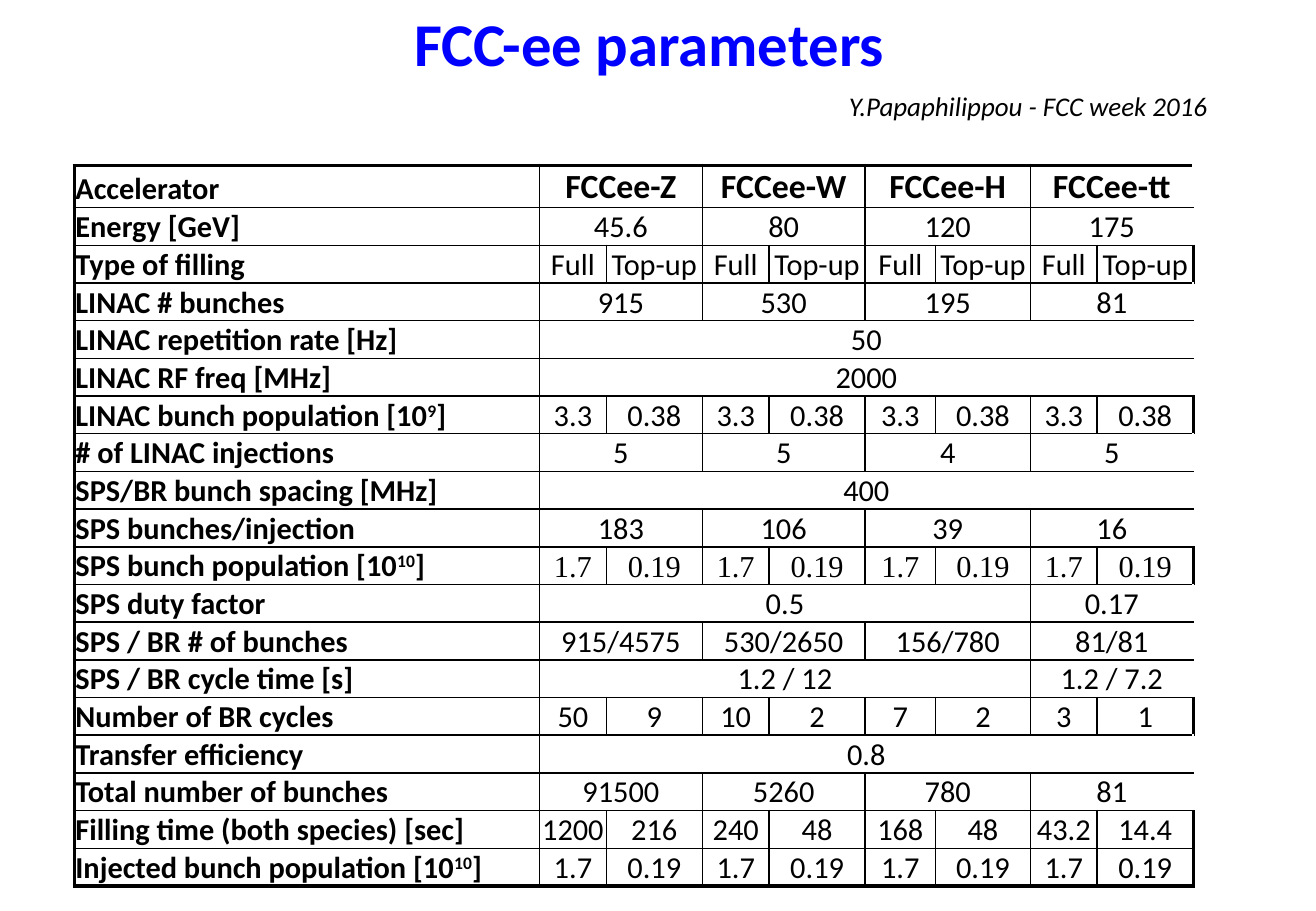
from pptx import Presentation
from pptx.dml.color import RGBColor
from pptx.enum.text import MSO_ANCHOR, PP_ALIGN
from pptx.oxml import parse_xml
from pptx.oxml.ns import nsdecls
from pptx.util import Pt

BLACK = RGBColor(0x00, 0x00, 0x00)
BLUE = RGBColor(0x00, 0x00, 0xFF)
THIN, THICK = 1, 2.25

# Row label (exponents between bars), then its values
ROWS = [
    ("Accelerator", ["FCCee-Z", "FCCee-W", "FCCee-H", "FCCee-tt"]),
    ("Energy [GeV]", ["45.6", "80", "120", "175"]),
    ("Type of filling", ["Full", "Top-up"] * 4),
    ("LINAC # bunches", ["915", "530", "195", "81"]),
    ("LINAC repetition rate [Hz]", ["50"]),
    ("LINAC RF freq [MHz]", ["2000"]),
    ("LINAC bunch population [10|9|]", ["3.3", "0.38"] * 4),
    ("# of LINAC injections", ["5", "5", "4", "5"]),
    ("SPS/BR bunch spacing [MHz]", ["400"]),
    ("SPS bunches/injection", ["183", "106", "39", "16"]),
    ("SPS bunch population [10|10|]", ["1.7", "0.19"] * 4),
    ("SPS duty factor", ["0.5", "0.17"]),
    ("SPS / BR # of bunches", ["915/4575", "530/2650", "156/780", "81/81"]),
    ("SPS / BR cycle time [s]", ["1.2 / 12", "1.2 / 7.2"]),
    ("Number of BR cycles", ["50", "9", "10", "2", "7", "2", "3", "1"]),
    ("Transfer efficiency", ["0.8"]),
    ("Total number of bunches", ["91500", "5260", "780", "81"]),
    ("Filling time (both species) [sec]",
     ["1200", "216", "240", "48", "168", "48", "43.2", "14.4"]),
    ("Injected bunch population [10|10|]", ["1.7", "0.19"] * 4),
]
# Columns taken by each value, by number of values in the row
SPANS = {1: [8], 2: [6, 2], 4: [2] * 4, 8: [1] * 8}
WIDTHS = [275.8, 39.6, 56.9, 39.6, 56.9, 41.8, 56.2, 39.6, 56.9]
HEADER_HEIGHT, ROW_HEIGHT = 25.1, 22.1


def write(frame, text, size=18, font="Calibri", color=BLACK, bold=False,
          italic=False, align=PP_ALIGN.LEFT):
    para = frame.paragraphs[0]
    para.alignment = align
    for index, part in enumerate(text.split("|")):
        span = para.add_run()
        span.text = part
        span.font.size = Pt(size)
        span.font.name = font
        span.font.color.rgb = color
        span.font.bold = bold
        span.font.italic = italic
        if index % 2:
            span.font._element.set("baseline", "30000")


def add_borders(cell, weights):
    properties = cell._tc.get_or_add_tcPr()
    for side in "LRTB":
        if side in weights:
            properties.append(parse_xml(
                f'<a:ln{side} {nsdecls("a")} w="{Pt(weights[side])}"><a:solidFill>'
                f'<a:srgbClr val="{BLACK}"/></a:solidFill></a:ln{side}>'))


deck = Presentation()
deck.slide_width, deck.slide_height = Pt(780), Pt(540)
page = deck.slides.add_slide(deck.slide_layouts[6])

# Title
box = page.shapes.add_textbox(Pt(193.7), Pt(0), Pt(382.3), Pt(41))
box.text_frame.word_wrap = True
write(box.text_frame, "FCC-ee parameters", size=36, color=BLUE, bold=True,
      align=PP_ALIGN.CENTER)

# Source line
box = page.shapes.add_textbox(Pt(496.1), Pt(48.2), Pt(283.7), Pt(28.8))
box.text_frame.word_wrap = True
box.text_frame.vertical_anchor = MSO_ANCHOR.MIDDLE
write(box.text_frame, "Y.Papaphilippou - FCC week 2016", size=16, italic=True)

# Parameter table
height = HEADER_HEIGHT + ROW_HEIGHT * (len(ROWS) - 1)
table = page.shapes.add_table(len(ROWS), len(WIDTHS), Pt(44), Pt(98),
                              Pt(sum(WIDTHS)), Pt(height)).table
table.first_row = table.horz_banding = False
for column, width in zip(table.columns, WIDTHS):
    column.width = Pt(width)

last_row, last_column = len(ROWS) - 1, len(WIDTHS) - 1
for row, (label, values) in enumerate(ROWS):
    table.rows[row].height = Pt(ROW_HEIGHT if row else HEADER_HEIGHT)
    start = 0
    for text, width in zip([label] + values, [1] + SPANS[len(values)]):
        end = start + width - 1
        # Outer frame is thick, and so is the right side of H injections
        right = THICK if end == last_column or (
            label == "# of LINAC injections" and end == 6) else THIN
        for column in range(start, end + 1):
            cell = table.cell(row, column)
            weights = {"T": THIN if row else THICK,
                       "B": THICK if row == last_row else THIN}
            if column == start:
                weights["L"] = THIN if column else THICK
            if column == end:
                weights["R"] = right
            add_borders(cell, weights)
            cell.fill.background()
            cell.margin_left = cell.margin_right = cell.margin_top = Pt(0.72)
            cell.margin_bottom = Pt(0)
            cell.vertical_anchor = MSO_ANCHOR.BOTTOM

        cell = table.cell(row, start)
        if width > 1:
            cell.merge(table.cell(row, end))
        write(cell.text_frame, text,
              size=20 if row == 0 and start else 18,
              font="Times New Roman" if start and label.startswith("SPS bunch pop")
              else "Calibri",
              bold=row == 0 or start == 0,
              align=PP_ALIGN.CENTER if start else PP_ALIGN.LEFT)
        start = end + 1

# Empty merged cells keep the small size so rows stay tight
for cell in table.iter_cells():
    if cell.is_spanned:
        cell.text_frame.paragraphs[0].font.size = Pt(18)

deck.save("out.pptx")
